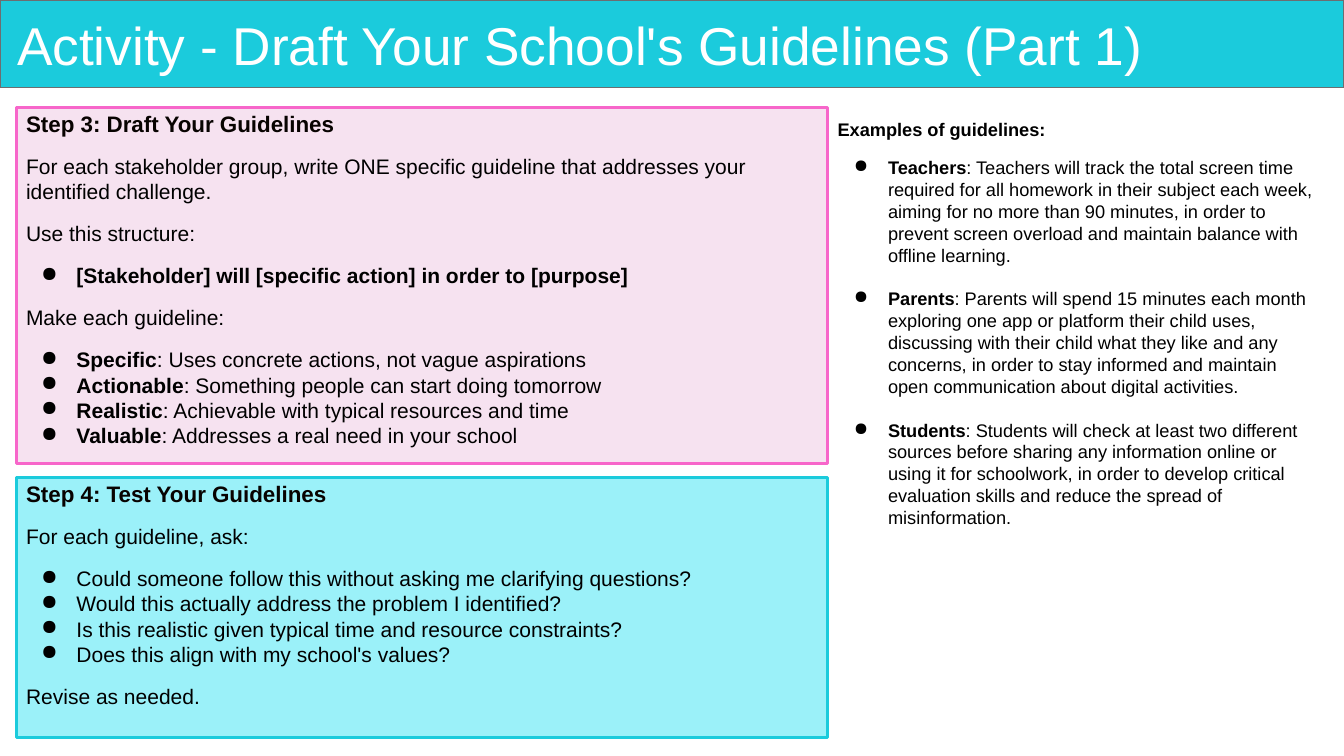
from pptx import Presentation
from pptx.dml.color import RGBColor
from pptx.enum.shapes import MSO_SHAPE as Shape
from pptx.enum.text import MSO_ANCHOR as Anchor, PP_ALIGN as Align
from pptx.oxml.xmlchemy import OxmlElement
from pptx.util import Inches, Pt

TITLE = "Activity - Draft Your School's Guidelines (Part 1)"
# Each line: (bulleted, bold part, plain part, space before in points)
DRAFT = [
    (False, "Step 3: Draft Your Guidelines", "", 0),
    (False, "", "For each stakeholder group, write ONE specific guideline that addresses your identified challenge.", 12),
    (False, "", "Use this structure:", 12),
    (True, "[Stakeholder] will [specific action] in order to [purpose]", "", 12),
    (False, "", "Make each guideline:", 12),
    (True, "Specific", ": Uses concrete actions, not vague aspirations", 12),
    (True, "Actionable", ": Something people can start doing tomorrow", 0),
    (True, "Realistic", ": Achievable with typical resources and time", 0),
    (True, "Valuable", ": Addresses a real need in your school", 0),
]
TEST = [
    (False, "Step 4: Test Your Guidelines", "", 0),
    (False, "", "For each guideline, ask:", 12),
    (True, "", "Could someone follow this without asking me clarifying questions?", 12),
    (True, "", "Would this actually address the problem I identified?", 0),
    (True, "", "Is this realistic given typical time and resource constraints?", 0),
    (True, "", "Does this align with my school's values?", 0),
    (False, "", "Revise as needed.", 12),
]
EXAMPLES = [
    (False, "Examples of guidelines:", "", 0),
    (True, "Teachers", ": Teachers will track the total screen time required for all homework in their subject each week, aiming for no more than 90 minutes, in order to prevent screen overload and maintain balance with offline learning.", 12),
    (True, "Parents", ": Parents will spend 15 minutes each month exploring one app or platform their child uses, discussing with their child what they like and any concerns, in order to stay informed and maintain open communication about digital activities.", 15.6),
    (True, "Students", ": Students will check at least two different sources before sharing any information online or using it for schoolwork, in order to develop critical evaluation skills and reduce the spread of misinformation.", 15.6),
]
WIDTH, HEIGHT = 13.33, 7.5
LEFT, TOP, GAP = 0.16, 1.07, 0.14
STEP_WIDTH = 8.05
STEPS = [(DRAFT, 3.53, "F6E2F0", "F766CA"), (TEST, 2.58, "9BF1F9", "1BCBDC")]


def color(value):
    return RGBColor.from_string(value)


def add_panel(page, place, fill, line, weight):
    panel = page.shapes.add_shape(Shape.RECTANGLE, *map(Inches, place))
    panel.shadow.inherit = False
    panel.fill.solid()
    panel.fill.fore_color.rgb = color(fill)
    panel.line.color.rgb = color(line)
    panel.line.width = Pt(weight)
    return panel


def set_frame(box, side, edge, anchor=Anchor.TOP):
    frame = box.text_frame
    frame.word_wrap = True
    frame.vertical_anchor = anchor
    frame.margin_left = frame.margin_right = Inches(side)
    frame.margin_top = frame.margin_bottom = Inches(edge)
    return frame


def style(font, size, ink, bold=False):
    font.name = "Arial"
    font.size = Pt(size)
    font.bold = bold
    font.color.rgb = color(ink)


def add_bullet(para, hanging):
    props = para._p.get_or_add_pPr()
    props.set("marL", str(Inches(0.5)))
    props.set("indent", str(-Inches(hanging)))
    bullet = OxmlElement("a:buChar")
    bullet.set("char", "●")
    props.append(bullet)


def write_lines(frame, lines, size, heading_size, heading_ink, hanging, heading_spacing):
    for index, (bulleted, strong, plain, before) in enumerate(lines):
        para = frame.add_paragraph() if index else frame.paragraphs[0]
        para.alignment = Align.LEFT
        para.space_before = Pt(before)
        para.line_spacing = 1.0 if index else heading_spacing
        if bulleted:
            add_bullet(para, hanging)
        for text, bold in ((strong, True), (plain, False)):
            if text:
                span = para.add_run()
                span.text = text
                style(span.font, size if index else heading_size,
                      "000000" if index else heading_ink, bold)


def main():
    deck = Presentation()
    deck.slide_width, deck.slide_height = Inches(WIDTH), Inches(HEIGHT)
    page = deck.slides.add_slide(deck.slide_layouts[6])

    add_panel(page, (0, 0, WIDTH, 0.87), "1BCBDC", "6C6E70", 1)
    title = page.shapes.add_textbox(*map(Inches, (0.11, 0.09, 13.06, 0.78)))
    frame = set_frame(title, 0.06, 0.06, Anchor.MIDDLE)
    frame.text = TITLE
    frame.paragraphs[0].line_spacing = 0.9
    style(frame.paragraphs[0].runs[0].font, 38, "FFFFFF")

    top = TOP
    for lines, height, fill, line in STEPS:
        panel = add_panel(page, (LEFT, top, STEP_WIDTH, height), fill, line, 2.25)
        write_lines(set_frame(panel, 0.1, 0.05), lines, 15, 16, "080301", 0.35, 0.9)
        top += height + GAP

    split = LEFT + STEP_WIDTH
    examples = page.shapes.add_textbox(*map(Inches, (split, TOP, WIDTH - LEFT - split, 4.31)))
    write_lines(set_frame(examples, 0.1, 0.1), EXAMPLES, 13, 13, "000000", 0.34, 1.0)

    deck.save("out.pptx")


if __name__ == "__main__":
    main()
